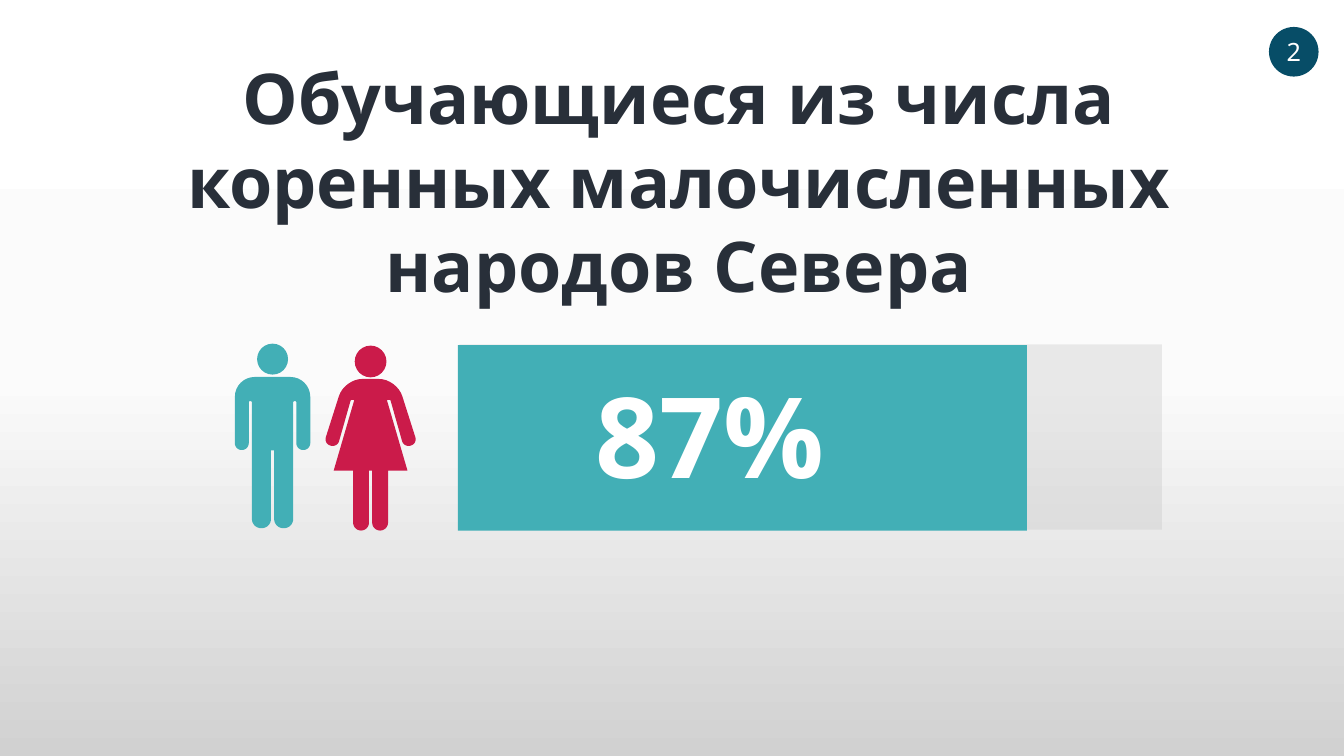
from copy import deepcopy
from math import hypot

from lxml import etree
from pptx import Presentation
from pptx.dml.color import RGBColor
from pptx.enum import shapes, text
from pptx.oxml.ns import qn
from pptx.util import Cm, Pt

FONT = "Noto Sans"
TEAL = RGBColor(0x42, 0xAF, 0xB6)
CRIMSON = RGBColor(0xCB, 0x1B, 0x4A)
NAVY = RGBColor(0x07, 0x4D, 0x67)
INK = RGBColor(0x28, 0x2F, 0x39)
GREY = RGBColor(0xBF, 0xBF, 0xBF)
WHITE = RGBColor(0xFF, 0xFF, 0xFF)
BACKDROP = [(0, WHITE), (0.5, RGBColor(0xFB, 0xFB, 0xFB)),
            (1, RGBColor(0xD1, 0xD1, 0xD1))]

# Right half of each body: distance from the axis, height, corner rounding (cm)
MAN = [(0.95, 9.5, 0.5), (0.95, 11.34, 0.17), (0.6, 11.34, 0.17),
       (0.6, 10.11, 0.03), (0.52, 10.11, 0.03), (0.52, 13.31, 0.23),
       (0.04, 13.31, 0.23), (0.04, 11.35, 0)]
WOMAN = [(0.66, 9.55, 0.45), (1.18, 11.18, 0.17), (0.84, 11.28, 0.17),
         (0.5, 10.08, 0.02), (0.41, 10.08, 0.02), (0.93, 11.86, 0),
         (0.44, 11.86, 0), (0.44, 13.37, 0.2), (0.04, 13.37, 0.2),
         (0.04, 11.86, 0)]


def paint(sp, color):
    sp.shadow.inherit = False
    sp.fill.solid()
    sp.fill.fore_color.rgb = color
    sp.line.fill.background()


def add_preset(parent, kind, left, top, width, height, color):
    sp = parent.add_shape(kind, Cm(left), Cm(top), Cm(width), Cm(height))
    paint(sp, color)
    return sp


def write(sp, words, size, color, bold=False):
    p = sp.text_frame.paragraphs[0]
    p.alignment = text.PP_ALIGN.CENTER
    r = p.add_run()
    r.text = words
    r.font.name, r.font.size, r.font.bold = FONT, Pt(size), bold
    r.font.color.rgb = color


def add_text(s, words, left, top, width, height, size, color):
    sp = s.shapes.add_textbox(Cm(left), Cm(top), Cm(width), Cm(height))
    sp.text_frame.word_wrap = True
    sp.text_frame.auto_size = text.MSO_AUTO_SIZE.SHAPE_TO_FIT_TEXT
    write(sp, words, size, color, bold=True)


def round_corner(before, corner, after, steps=8):
    """Points of a smooth curve that replaces one corner."""
    x, y, trim = corner
    if not trim:
        return [(x, y)]

    def toward(other, distance):
        dx, dy = other[0] - x, other[1] - y
        length = hypot(dx, dy)
        return x + dx / length * distance, y + dy / length * distance

    controls = [toward(before, trim), toward(before, trim * 0.45),
                toward(after, trim * 0.45), toward(after, trim)]
    points = []
    for i in range(steps + 1):
        t = i / steps
        weights = ((1 - t) ** 3, 3 * t * (1 - t) ** 2, 3 * t * t * (1 - t), t ** 3)
        points.append(tuple(sum(w * c[k] for w, c in zip(weights, controls))
                            for k in (0, 1)))
    return points


def add_person(s, axis, half, head_top, head_size, color):
    group = s.shapes.add_group_shape()
    add_preset(group.shapes, shapes.MSO_SHAPE.OVAL, axis - head_size / 2,
               head_top, head_size, head_size, color)
    corners = half + [(-x, y, trim) for x, y, trim in reversed(half)]
    outline = []
    for i, corner in enumerate(corners):
        after = corners[(i + 1) % len(corners)]
        outline += round_corner(corners[i - 1], corner, after)
    points = [(Cm(axis + x), Cm(y)) for x, y in outline]
    builder = group.shapes.build_freeform(*points[0], scale=1.0)
    builder.add_line_segments(points[1:], close=True)
    paint(builder.convert_to_shape(), color)


def set_background(s):
    fill = s.background.fill
    fill.gradient()
    fill.gradient_angle = 270
    last = list(s.element.iter(qn("a:gs")))[-1]
    last.addnext(deepcopy(last))
    for stop, (position, color) in zip(fill.gradient_stops, BACKDROP):
        stop.position = position
        stop.color.rgb = color


def main():
    prs = Presentation()
    prs.slide_width, prs.slide_height = Cm(33.87), Cm(19.05)
    s = prs.slides.add_slide(prs.slide_layouts[6])
    set_background(s)

    # Full-length track of the bar, 30 % opaque
    rect = shapes.MSO_SHAPE.RECTANGLE
    track = add_preset(s.shapes, rect, 11.58, 8.68, 17.7, 4.67, GREY)
    rgb = next(track.element.spPr.iter(qn("a:srgbClr")))
    etree.SubElement(rgb, qn("a:alpha"), val="30000")

    # Title
    add_text(s, "Обучающиеся из числа коренных малочисленных народов Севера",
             4.42, 1.25, 25.37, 6.68, 50, INK)

    # Share bar
    add_preset(s.shapes, rect, 11.54, 8.7, 14.34, 4.67, TEAL)
    add_text(s, "87%", 12.52, 9.12, 10.77, 3.68, 80, WHITE)

    # Man and woman
    add_person(s, 6.87, MAN, 8.66, 0.78, TEAL)
    add_person(s, 9.34, WOMAN, 8.71, 0.8, CRIMSON)

    # Slide number badge
    badge = add_preset(s.shapes, shapes.MSO_SHAPE.OVAL, 31.98, 0.68, 1.25, 1.25, NAVY)
    badge.text_frame.word_wrap = False
    badge.text_frame.vertical_anchor = text.MSO_ANCHOR.MIDDLE
    write(badge, "2", 18, WHITE)

    prs.save("out.pptx")


if __name__ == "__main__":
    main()
